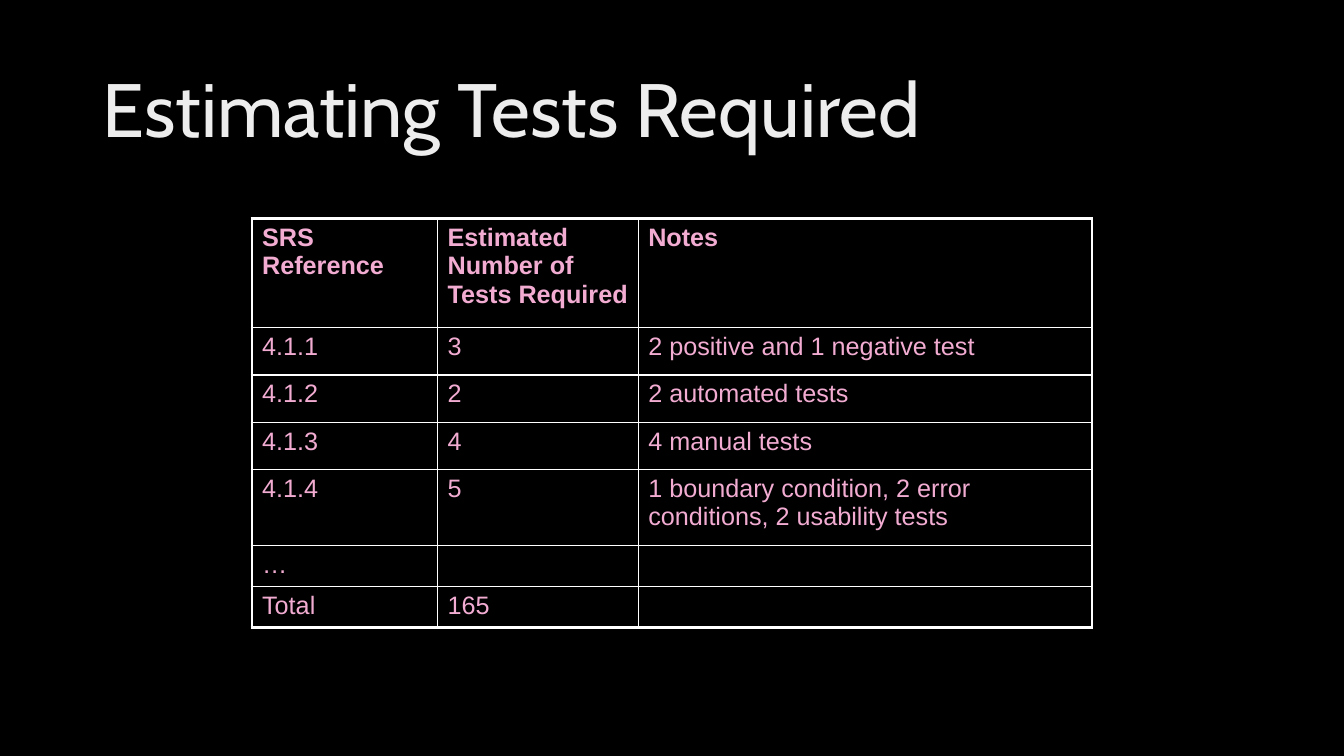
"""Build the slide that estimates the tests required per SRS reference."""
import pptx
import pptx.dml.color
import pptx.enum.text
import pptx.oxml
import pptx.oxml.ns
import pptx.util

Inches = pptx.util.Inches
Pt = pptx.util.Pt
Color = pptx.dml.color.RGBColor.from_string
Text = pptx.enum.text

theme = {
    "back": "000000",
    "line": "FFFFFF",
    "thin": 1,
    "thick": 2.25,
    "title": {"name": "Cabin", "size": Pt(54), "bold": False},
    "title color": "EDEDED",
    "cell": {"name": "Arial", "size": Pt(18)},
    "cell color": "F2ACD2",
}
rows = [
    (1.08, "SRS Reference", "Estimated Number of Tests Required", "Notes"),
    (0.47, "4.1.1", "3", "2 positive and 1 negative test"),
    (0.47, "4.1.2", "2", "2 automated tests"),
    (0.47, "4.1.3", "4", "4 manual tests"),
    (0.75, "4.1.4", "5", "1 boundary condition, 2 error conditions, 2 usability tests"),
    (0.41, "…", "", ""),
    (0.39, "Total", "165", ""),
]
widths = [1.84, 1.99, 4.5]


def style(font, look, color):
    for key, value in look.items():
        setattr(font, key, value)
    font.color.rgb = Color(color)


def border(cell, sides):
    props = cell._tc.get_or_add_tcPr()
    for place, (side, outer) in enumerate(sides.items()):
        width = Pt(theme["thick"] if outer else theme["thin"])
        props.insert(place, pptx.oxml.parse_xml(
            f'<a:ln{side} {pptx.oxml.ns.nsdecls("a")} w="{width}"><a:solidFill>'
            f'<a:srgbClr val="{theme["line"]}"/></a:solidFill></a:ln{side}>'))


deck = pptx.Presentation()
deck.slide_width = Inches(13.33)
deck.slide_height = Inches(7.5)
slide = deck.slides.add_slide(deck.slide_layouts[5])
slide.background.fill.solid()
slide.background.fill.fore_color.rgb = Color(theme["back"])

title = slide.shapes.title
place = {"left": 0.92, "top": 0.4, "width": 11.5, "height": 1.45}
for key, value in place.items():
    setattr(title, key, Inches(value))
title.text = "Estimating Tests Required"
frame = title.text_frame
frame.word_wrap = True
frame.auto_size = Text.MSO_AUTO_SIZE.NONE
frame.vertical_anchor = Text.MSO_ANCHOR.MIDDLE
head = frame.paragraphs[0]
head.alignment = Text.PP_ALIGN.LEFT
head.line_spacing = 0.9
style(head.runs[0].font, theme["title"], theme["title color"])

table = slide.shapes.add_table(
    len(rows), len(widths), Inches(2.5), Inches(2.17),
    Inches(sum(widths)), Inches(sum(row[0] for row in rows))).table
table.first_row = False
table.horz_banding = False
for column, width in zip(table.columns, widths):
    column.width = Inches(width)

for r, (height, *texts) in enumerate(rows):
    table.rows[r].height = Inches(height)
    for c, text in enumerate(texts):
        cell = table.cell(r, c)
        cell.margin_right = Inches(0.08)
        cell.fill.background()
        border(cell, {"L": c == 0, "R": c == len(widths) - 1,
                      "T": r == 0, "B": r == len(rows) - 1})
        if text:
            run = cell.text_frame.paragraphs[0].add_run()
            run.text = text
            style(run.font, theme["cell"] | {"bold": r == 0}, theme["cell color"])

deck.save("out.pptx")
